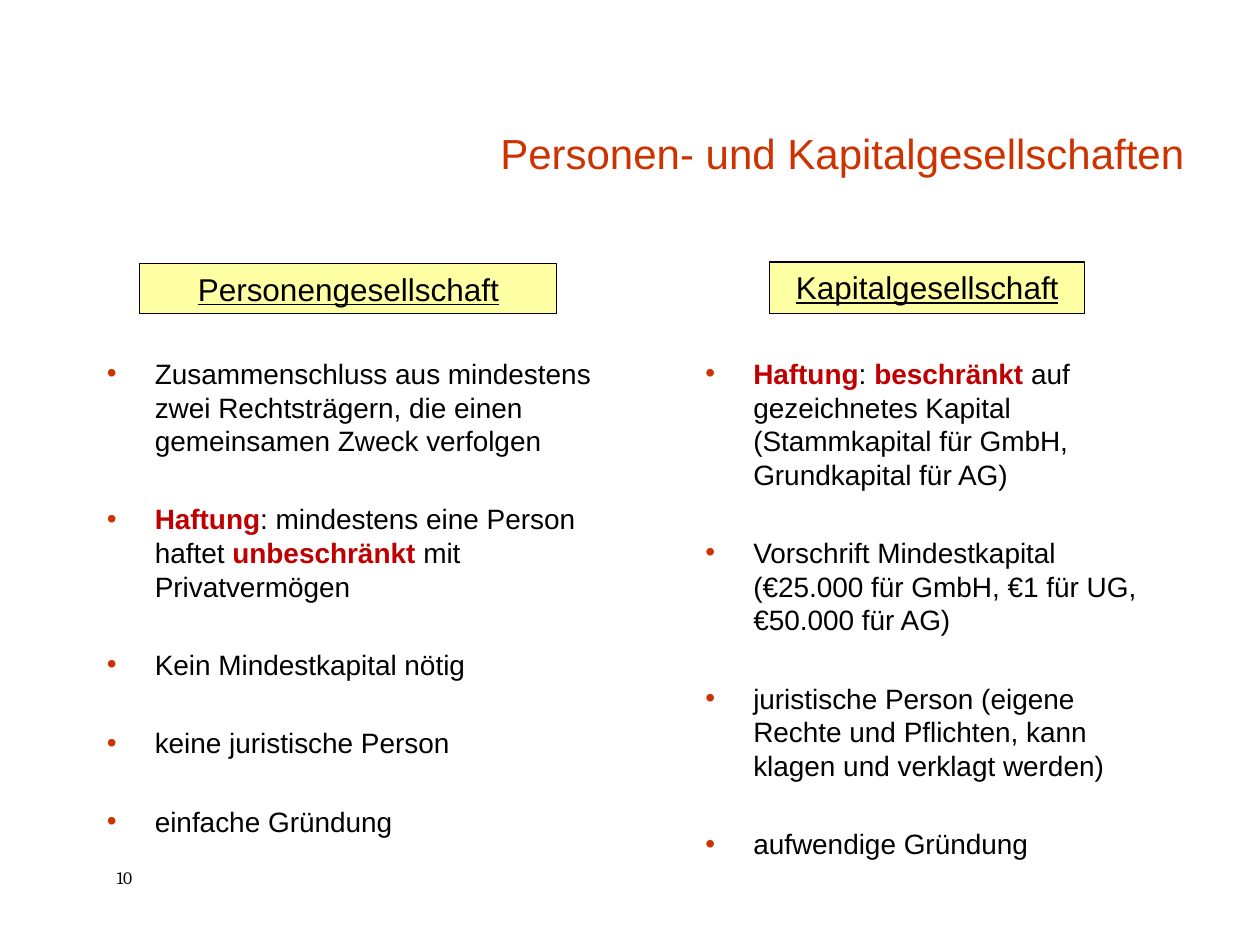
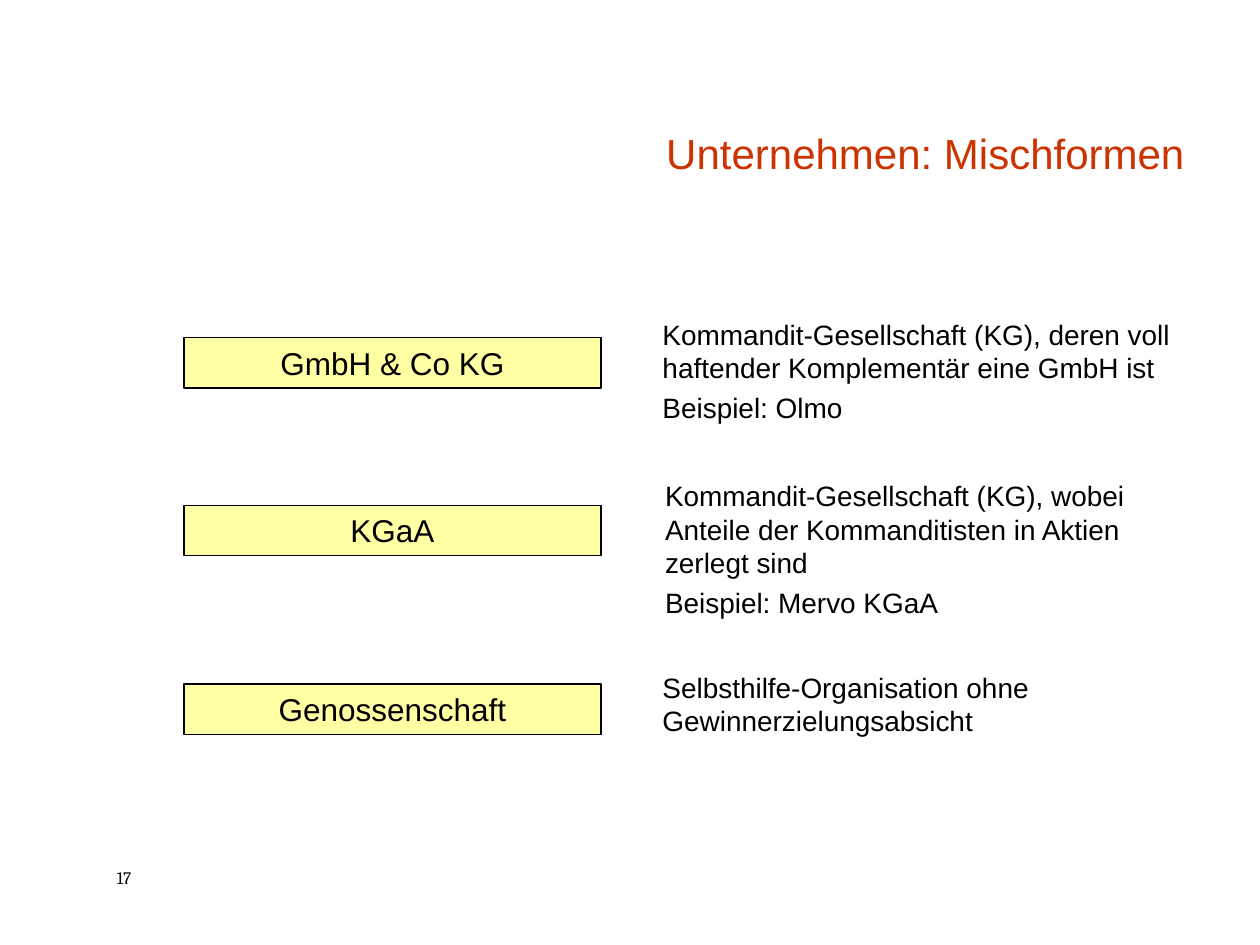
from dataclasses import dataclass

from lxml import etree
from pptx import Presentation
from pptx.dml.color import RGBColor
from pptx.enum.shapes import MSO_SHAPE
from pptx.enum.text import MSO_ANCHOR, MSO_AUTO_SIZE, PP_ALIGN
from pptx.oxml.ns import qn
from pptx.util import Pt

RECT = MSO_SHAPE.RECTANGLE
TOP, BOTTOM = MSO_ANCHOR.TOP, MSO_ANCHOR.BOTTOM
LEFT, CENTER, RIGHT = PP_ALIGN.LEFT, PP_ALIGN.CENTER, PP_ALIGN.RIGHT
FIXED = MSO_AUTO_SIZE.NONE
PX = 9144  # 100 px to the inch
TITLE_ONLY = 5


@dataclass(frozen=True)
class Theme:
    font: str = "Arial"
    serif: str = "Cambria"
    red: str = "CC3300"
    strong: str = "C00000"
    ink: str = "000000"
    fill: str = "FFFFA3"
    title: int = 24
    head: int = 18
    body: int = 16
    small: int = 10
    edge: float = 0.75
    lead: float = 1.2
    indent: int = 38


class Deck:
    def __init__(self, theme):
        self.theme = theme
        self.show = Presentation()
        self.show.slide_width, self.show.slide_height = 1000 * PX, 750 * PX
        self.slide = None

    def start(self, title, number):
        self.slide = self.show.slides.add_slide(self.show.slide_layouts[TITLE_ONLY])
        t = self.theme
        shape = self.slide.shapes.title
        shape.left, shape.top = 209 * PX, 42 * PX
        shape.width, shape.height = 741 * PX, 105 * PX
        frame = shape.text_frame
        frame.text = title
        frame.auto_size = FIXED
        frame.vertical_anchor = BOTTOM
        para = frame.paragraphs[0]
        para.alignment, para.line_spacing = RIGHT, 0.9
        self.style(para.runs[0], t.title, t.red)
        self.note(83, 683, 67, 27, [number], size=t.small, font=t.serif)

    def style(self, run, size, color, font=None):
        run.font.name = font or self.theme.font
        run.font.size = Pt(size)
        run.font.color.rgb = RGBColor.from_string(color)

    def put(self, para, text, size, font=None):
        """Fill a paragraph; parts between asterisks are stressed."""
        t = self.theme
        para.line_spacing = Pt(round(size * t.lead, 2))
        for i, part in enumerate(text.split("*")):
            if part:
                run = para.add_run()
                run.text = part
                self.style(run, size, t.strong if i % 2 else t.ink, font)
                run.font.bold = bool(i % 2)

    def note(self, x, y, w, h, lines, gap=0, size=None, font=None, dots=False):
        size = size or self.theme.body
        box = self.slide.shapes.add_textbox(x * PX, y * PX, w * PX, h * PX)
        frame = box.text_frame
        frame.word_wrap = True
        for i, line in enumerate(lines):
            para = frame.add_paragraph() if i else frame.paragraphs[0]
            para.alignment = LEFT
            if i:
                para.space_before = Pt(gap)
            self.put(para, line, size, font)
            if dots:
                self.dot(para)

    def dot(self, para):
        """Give the paragraph a hanging coloured bullet."""
        props = para._p.get_or_add_pPr()
        props.set("marL", str(self.theme.indent * PX))
        props.set("indent", str(-self.theme.indent * PX))
        color = etree.SubElement(props, qn("a:buClr"))
        etree.SubElement(color, qn("a:srgbClr"), val=self.theme.red)
        etree.SubElement(props, qn("a:buFont"), typeface=self.theme.font)
        etree.SubElement(props, qn("a:buChar"), char="•")

    def label(self, x, y, w, h, text, under=False):
        t = self.theme
        box = self.slide.shapes.add_shape(RECT, x * PX, y * PX, w * PX, h * PX)
        box.shadow.inherit = False
        box.fill.solid()
        box.fill.fore_color.rgb = RGBColor.from_string(t.fill)
        box.line.color.rgb = RGBColor.from_string(t.ink)
        box.line.width = Pt(t.edge)
        frame = box.text_frame
        frame.word_wrap = True
        frame.vertical_anchor = TOP
        para = frame.paragraphs[0]
        para.alignment = CENTER
        self.put(para, text, t.head)
        para.runs[0].font.underline = under


PERSON = [
    "Zusammenschluss aus mindestens zwei Rechtsträgern, die einen gemeinsamen Zweck verfolgen",
    "*Haftung*: mindestens eine Person haftet *unbeschränkt* mit Privatvermögen",
    "Kein Mindestkapital nötig",
    "keine juristische Person",
    "einfache Gründung",
]
CAPITAL = [
    "*Haftung*: *beschränkt* auf gezeichnetes Kapital (Stammkapital für GmbH, Grundkapital für AG)",
    "Vorschrift Mindestkapital (€25.000 für GmbH, €1 für UG, €50.000 für AG)",
    "juristische Person (eigene Rechte und Pflichten, kann klagen und verklagt werden)",
    "aufwendige Gründung",
]
# label top, text left, text top, label, text
MIXED = [
    (268, 516, 247, "GmbH & Co KG",
     ["Kommandit-Gesellschaft (KG), deren voll haftender Komplementär eine GmbH ist",
      "Beispiel: Olmo"]),
    (401, 518, 375, "KGaA",
     ["Kommandit-Gesellschaft (KG), wobei Anteile der Kommanditisten in Aktien zerlegt sind",
      "Beispiel: Mervo KGaA"]),
    (543, 516, 527, "Genossenschaft",
     ["Selbsthilfe-Organisation ohne Gewinnerzielungsabsicht"]),
]


def compare(deck):
    deck.start("Personen- und Kapitalgesellschaften", "10")
    deck.label(111, 209, 331, 40, "Personengesellschaft", under=True)
    deck.label(611, 208, 250, 41, "Kapitalgesellschaft", under=True)
    deck.note(75, 278, 435, 331, PERSON, gap=25.6, dots=True)
    deck.note(550, 278, 378, 295, CAPITAL, gap=25.6, dots=True)


def mix(deck):
    deck.start("Unternehmen: Mischformen", "17")
    for top, x, y, name, lines in MIXED:
        deck.label(146, top, 331, 40, name)
        deck.note(x, y, 433, 65, lines, gap=3.2)


def main():
    deck = Deck(Theme())
    compare(deck)
    mix(deck)
    deck.show.save("out.pptx")


if __name__ == "__main__":
    main()
